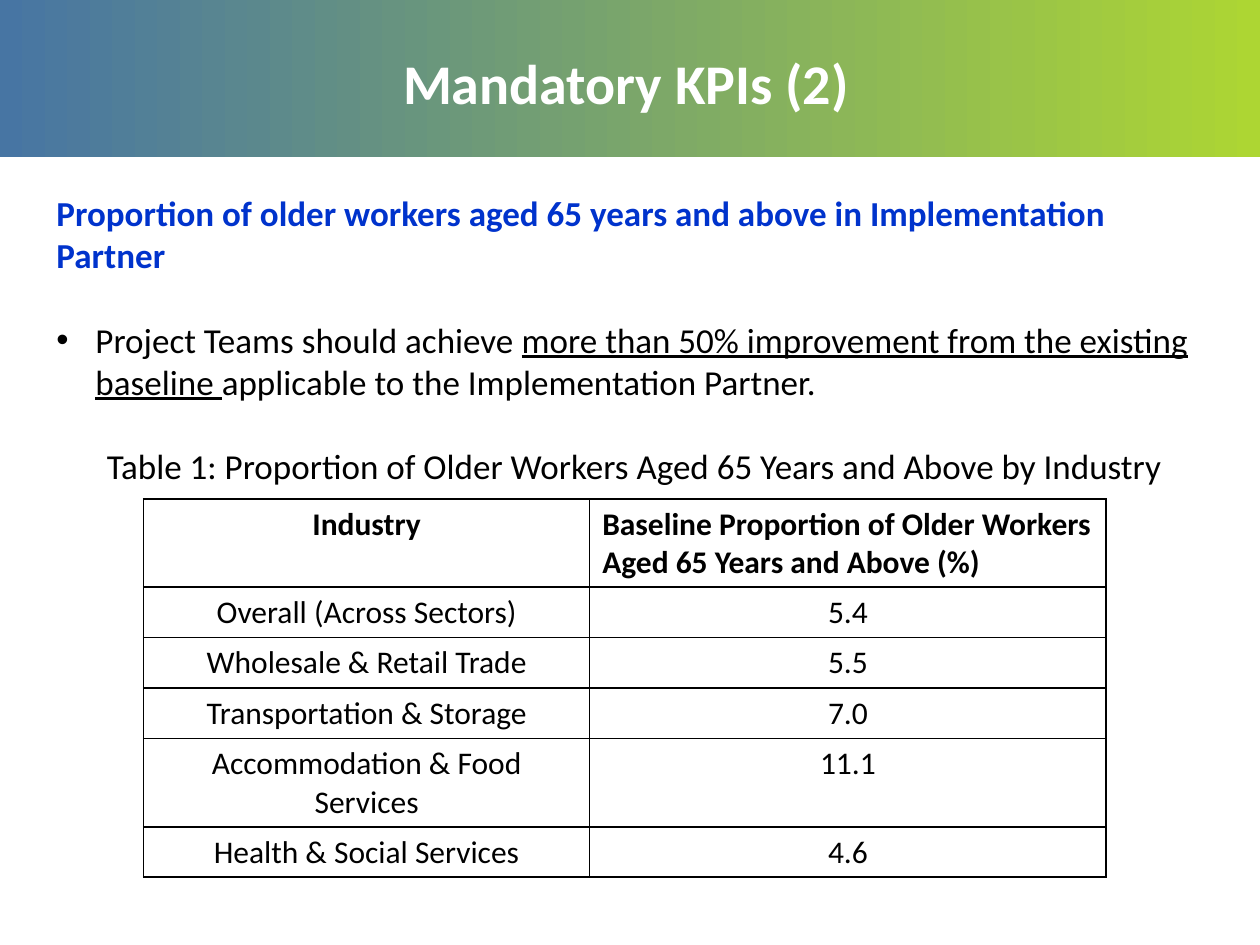
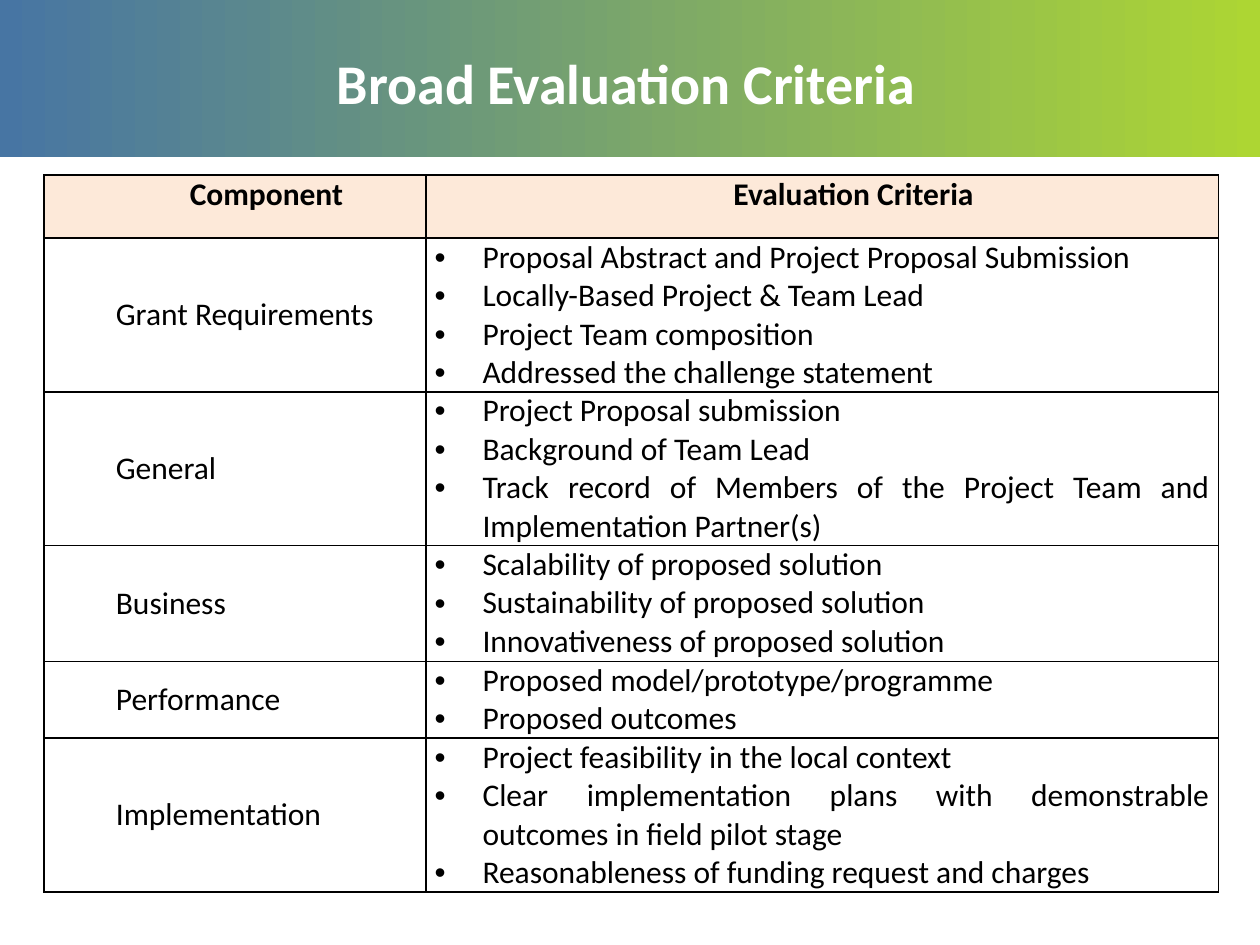
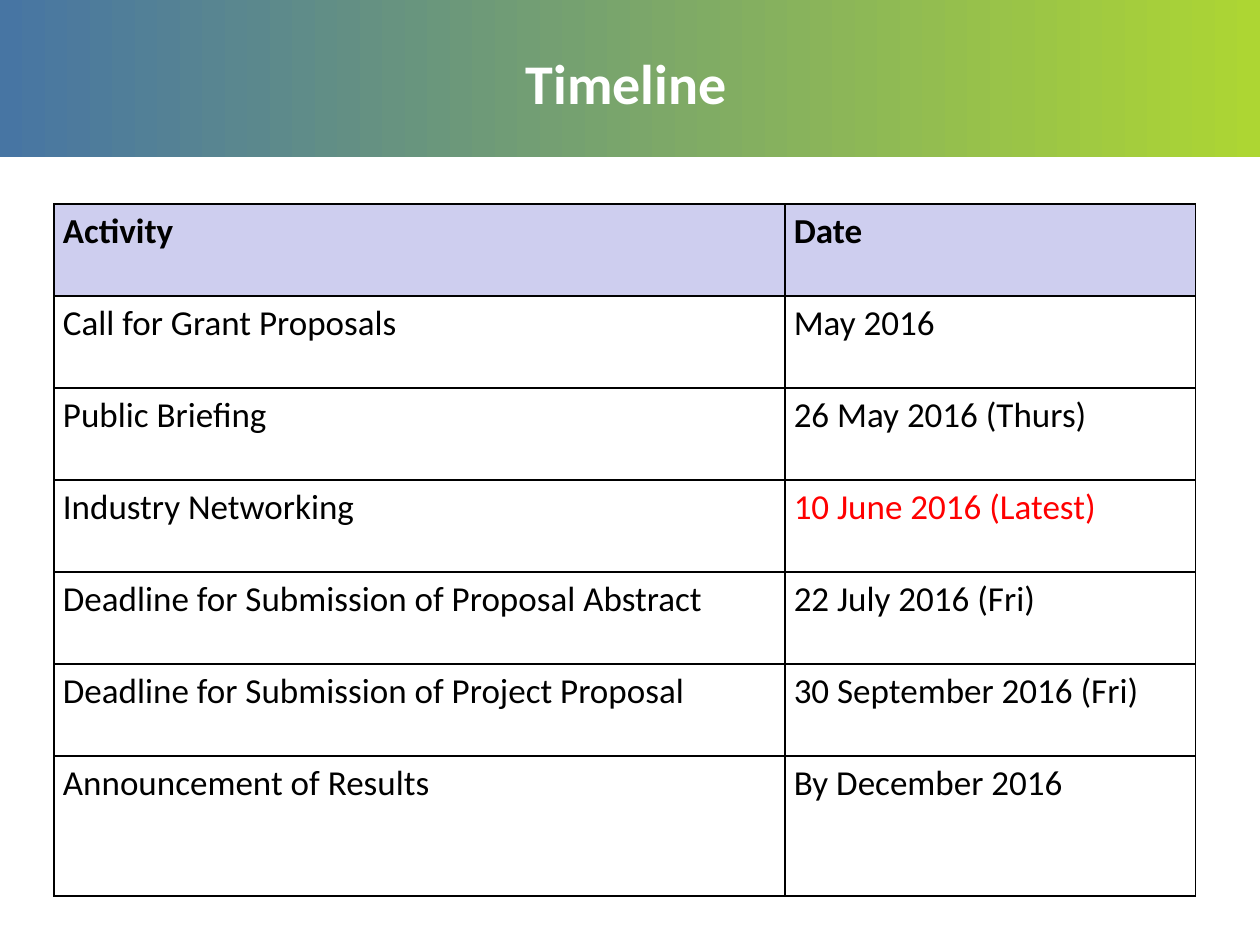
import pptx
import pptx.dml.color
import pptx.enum.dml
import pptx.enum.shapes
import pptx.enum.text
import pptx.oxml.ns
import pptx.util
from lxml import etree

Inches = pptx.util.Inches
Pt = pptx.util.Pt
RGBColor = pptx.dml.color.RGBColor
Align = pptx.enum.text.PP_ALIGN
Anchor = pptx.enum.text.MSO_ANCHOR
qn = pptx.oxml.ns.qn

BLACK = RGBColor(0x00, 0x00, 0x00)
WHITE = RGBColor(0xFF, 0xFF, 0xFF)
BAND_BLUE = RGBColor(0x47, 0x75, 0xA3)
BAND_GREEN = RGBColor(0xAD, 0xD6, 0x33)
HEADING_BLUE = RGBColor(0x00, 0x33, 0xCC)
PEACH = RGBColor(0xFD, 0xE9, 0xD9)
LAVENDER = RGBColor(0xCE, 0xCE, 0xEF)
RED = RGBColor(0xFF, 0x00, 0x00)


class Deck:
    """Holds the shared style and the current slide."""

    font_name = "Calibri"
    title_size = 32

    def __init__(self):
        self.presentation = pptx.Presentation()
        self.presentation.slide_width = Inches(10)
        self.presentation.slide_height = Inches(7.5)
        self.slide = None

    def add_slide(self, title):
        self.slide = self.presentation.slides.add_slide(self.presentation.slide_layouts[6])
        self.add_band()
        text_frame = self.add_text_box(0.18, 0.18, 9.58, 0.95)
        text_frame.vertical_anchor = Anchor.MIDDLE
        text_frame.text = title
        self.format_paragraph(text_frame.paragraphs[0], self.title_size, WHITE, True, Align.CENTER)

    def add_band(self):
        band = self.slide.shapes.add_shape(
            pptx.enum.shapes.MSO_SHAPE.RECTANGLE, 0, 0, Inches(10), Inches(1.25))
        band.shadow.inherit = False
        band.line.fill.background()
        band.fill.gradient()
        band.fill.gradient_angle = 0
        for stop, color, position in zip(band.fill.gradient_stops, (BAND_BLUE, BAND_GREEN), (0, 1)):
            stop.color.rgb = color
            stop.position = position

    def add_text_box(self, left, top, width, height):
        text_box = self.slide.shapes.add_textbox(
            Inches(left), Inches(top), Inches(width), Inches(height))
        text_box.text_frame.word_wrap = True
        return text_box.text_frame

    def format_paragraph(self, paragraph, size, color=BLACK, bold=False, align=Align.LEFT):
        paragraph.alignment = align
        for run in paragraph.runs:
            run.font.name = self.font_name
            run.font.size = Pt(size)
            run.font.bold = bold
            run.font.color.rgb = color

    def indent(self, paragraph, left, bullet=False):
        properties = paragraph._p.get_or_add_pPr()
        properties.set("marL", str(Inches(left)))
        properties.set("indent", str(-Inches(left) if bullet else 0))
        if bullet:
            etree.SubElement(properties, qn("a:buFont"), typeface="Arial")
            etree.SubElement(properties, qn("a:buChar"), char="•")

    def add_borders(self, cell):
        properties = cell._tc.get_or_add_tcPr()
        for side in ("a:lnL", "a:lnR", "a:lnT", "a:lnB"):
            line = etree.SubElement(properties, qn(side), w=str(Pt(1)))
            fill = etree.SubElement(line, qn("a:solidFill"))
            etree.SubElement(fill, qn("a:srgbClr"), val=str(BLACK))

    def add_table(self, left, top, widths, heights, rows, size, header_fill=WHITE,
                  align=Align.LEFT, insets=(0.07, 0)):
        """Draw a bordered table; a newline in a cell starts a paragraph."""
        table = self.slide.shapes.add_table(
            len(rows), len(widths), Inches(left), Inches(top),
            Inches(sum(widths)), Inches(sum(heights))).table
        table.horz_banding = False
        for column, width in zip(table.columns, widths):
            column.width = Inches(width)
        for row_index, (row, height, texts) in enumerate(zip(table.rows, heights, rows)):
            row.height = Inches(height)
            is_header = row_index == 0
            for cell, text in zip(row.cells, texts):
                self.add_borders(cell)
                cell.fill.solid()
                cell.fill.fore_color.rgb = header_fill if is_header else WHITE
                cell.margin_left = cell.margin_right = Inches(insets[0])
                cell.margin_top = cell.margin_bottom = Inches(insets[1])
                cell.text_frame.text = text
                for paragraph in cell.text_frame.paragraphs:
                    self.format_paragraph(paragraph, size, bold=is_header, align=align)
        return table


def add_kpi_slide(deck):
    deck.add_slide("Mandatory KPIs (2)")

    # Heading, target and table caption
    text_frame = deck.add_text_box(0.35, 1.47, 9.37, 2.76)
    heading = text_frame.paragraphs[0]
    heading.text = ("Proportion of older workers aged 65 years and above "
                    "in Implementation Partner")
    target = text_frame.add_paragraph()
    for text in ("Project Teams should achieve ",
                 "more than 50% improvement from the existing baseline ",
                 "applicable to the Implementation Partner."):
        target.add_run().text = text
    caption = text_frame.add_paragraph()
    caption.text = "Table 1: Proportion of Older Workers Aged 65 Years and Above by Industry"

    deck.indent(target, 0.31, bullet=True)
    target.space_before = caption.space_before = Pt(24.4)
    deck.format_paragraph(heading, 20, HEADING_BLUE, bold=True)
    deck.format_paragraph(target, 20)
    deck.format_paragraph(caption, 20, align=Align.CENTER)
    target.runs[1].font.underline = True

    # Baselines by industry
    rows = [
        ("Industry", "Baseline Proportion of Older Workers Aged 65 Years and Above (%)"),
        ("Overall (Across Sectors)", "5.4"),
        ("Wholesale & Retail Trade", "5.5"),
        ("Transportation & Storage", "7.0"),
        ("Accommodation & Food Services", "11.1"),
        ("Health & Social Services", "4.6"),
    ]
    table = deck.add_table(1.14, 3.96, [3.54, 4.1], [0.7] + [0.4] * 5, rows, 18,
                           align=Align.CENTER, insets=(0.1, 0.05))
    table.cell(0, 1).text_frame.paragraphs[0].alignment = Align.LEFT


def add_criteria_slide(deck):
    deck.add_slide("Broad Evaluation Criteria")
    rows = [
        ("Component", "Evaluation Criteria"),
        ("Grant Requirements",
         "Proposal Abstract and Project Proposal Submission\n"
         "Locally-Based Project & Team Lead\n"
         "Project Team composition\n"
         "Addressed the challenge statement"),
        ("General",
         "Project Proposal submission\n"
         "Background of Team Lead\n"
         "Track record of Members of the Project Team and Implementation Partner(s)"),
        ("Business",
         "Scalability of proposed solution\n"
         "Sustainability of proposed solution\n"
         "Innovativeness of proposed solution"),
        ("Performance",
         "Proposed model/prototype/programme\n"
         "Proposed outcomes"),
        ("Implementation",
         "Project feasibility in the local context\n"
         "Clear implementation plans with demonstrable outcomes in field pilot stage\n"
         "Reasonableness of funding request and charges"),
    ]
    table = deck.add_table(0.35, 1.39, [3.03, 6.29], [0.5, 1.22, 1.22, 0.92, 0.61, 1.22],
                           rows, 18, PEACH)

    # Centred header, indented components, bulleted criteria
    for row_index, row in enumerate(table.rows):
        component, criteria = row.cells
        deck.indent(component.text_frame.paragraphs[0], 0.5)
        if row_index == 0:
            deck.indent(criteria.text_frame.paragraphs[0], 0.5)
            for cell in row.cells:
                cell.text_frame.paragraphs[0].alignment = Align.CENTER
            continue
        component.vertical_anchor = Anchor.MIDDLE
        for paragraph in criteria.text_frame.paragraphs:
            deck.indent(paragraph, 0.38, bullet=True)
            paragraph.alignment = Align.JUSTIFY


def add_timeline_slide(deck):
    deck.add_slide("Timeline")
    rows = [
        ("Activity", "Date"),
        ("Call for Grant Proposals", "May 2016"),
        ("Public Briefing", "26 May 2016 (Thurs)"),
        ("Industry Networking", "10 June 2016 (Latest)"),
        ("Deadline for Submission of Proposal Abstract", "22 July 2016 (Fri)"),
        ("Deadline for Submission of Project Proposal", "30 September 2016 (Fri)"),
        ("Announcement of Results", "By December 2016"),
    ]
    table = deck.add_table(0.43, 1.62, [5.8, 3.26], [0.73] * 6 + [1.11], rows, 20,
                           LAVENDER, Align.JUSTIFY)
    for cell in table.iter_cells():
        cell.text_frame.paragraphs[0].line_spacing = 1.15

    # Highlight the networking deadline
    table.cell(3, 1).text_frame.paragraphs[0].runs[0].font.color.rgb = RED


def main():
    deck = Deck()
    add_kpi_slide(deck)
    add_criteria_slide(deck)
    add_timeline_slide(deck)
    deck.presentation.save("out.pptx")


if __name__ == "__main__":
    main()
